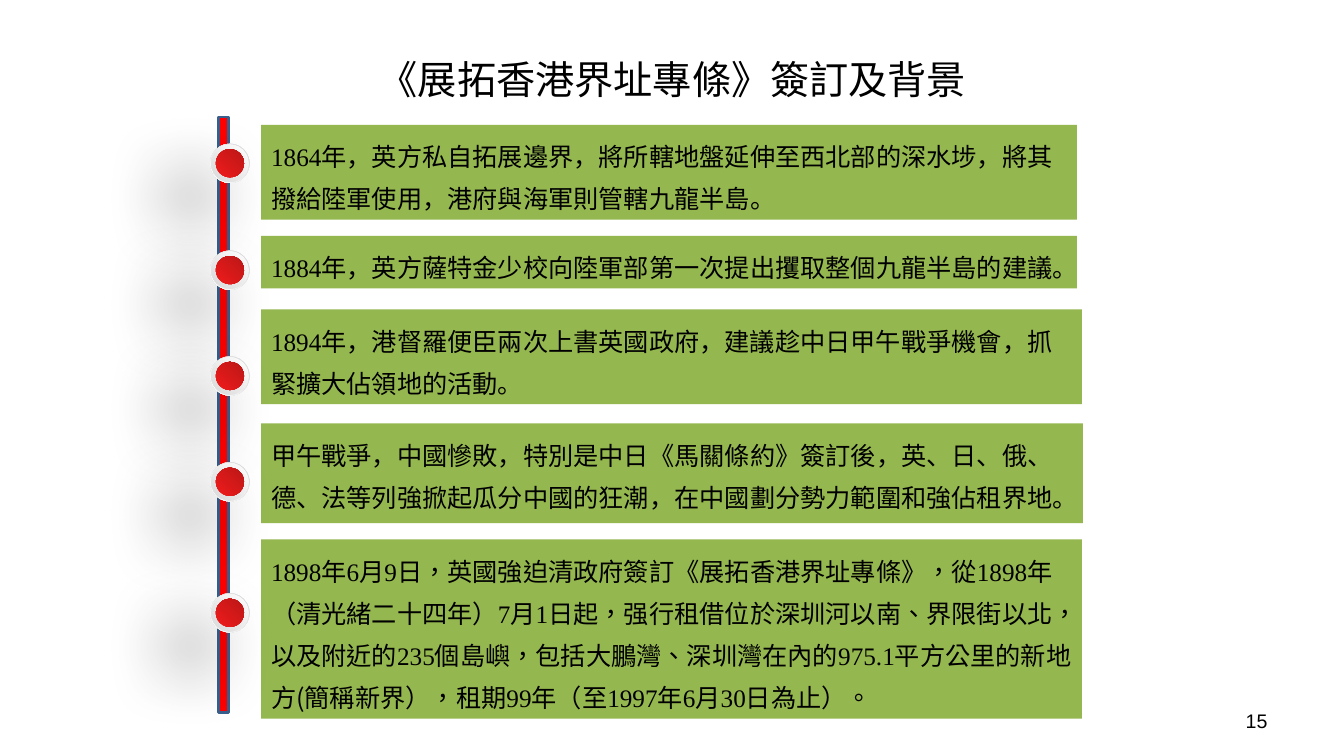
from lxml.etree import SubElement
from pptx import Presentation
from pptx.dml.color import RGBColor
from pptx.enum.lang import MSO_LANGUAGE_ID
from pptx.enum.shapes import MSO_SHAPE
from pptx.enum.text import MSO_ANCHOR, MSO_AUTO_SIZE, PP_ALIGN
from pptx.oxml.ns import qn
from pptx.util import Inches, Pt

BLACK = RGBColor(0x00, 0x00, 0x00)
WHITE = RGBColor(0xFF, 0xFF, 0xFF)
GREEN = RGBColor(0x95, 0xB7, 0x4F)
RED = RGBColor(0xFF, 0x00, 0x00)
BLUE = RGBColor(0x3A, 0x5F, 0x8C)
GREY = RGBColor(0xD9, 0xD9, 0xD9)
PALE = RGBColor(0xFE, 0xFE, 0xFE)
DARK_RED = RGBColor(0xBB, 0x17, 0x17)
BRIGHT_RED = RGBColor(0xF1, 0x1B, 0x1B)

CJK = "Noto Sans CJK SC"
SERIF = "Times New Roman"
SIMPLIFIED = MSO_LANGUAGE_ID.SIMPLIFIED_CHINESE
TRADITIONAL = MSO_LANGUAGE_ID.TRADITIONAL_CHINESE

BOTTOM_LEFT = {"l": "0", "t": "100000", "r": "100000", "b": "0"}
TOP_RIGHT = {"l": "100000", "t": "0", "r": "0", "b": "100000"}

# Text between bars alternates between the serif and the CJK font.
EVENTS = [
    (1.24, 8.09, 0.94, 1.62, SIMPLIFIED,
     "1864年|，英方私自拓展邊界，將所轄地盤延伸至西北部的深水埗，將其撥給陸軍使用，"
     "港府與海軍則管轄九龍半島。"),
    (2.34, 8.09, 0.52, 2.68, SIMPLIFIED,
     "1884|年，英方薩特金少校向陸軍部第一次提出攫取整個九龍半島的建議。"),
    (3.07, 8.14, 0.94, 3.73, SIMPLIFIED,
     "1894年|，港督羅便臣兩次上書英國政府，建議趁中日甲午戰爭機會，抓緊擴大佔領地的活動。"),
    (4.2, 8.15, 0.99, 4.78, SIMPLIFIED,
     "|甲午戰爭，中國慘敗，特別是中日《馬關條約》簽訂後，英、日、俄、德、法等列強"
     "掀起瓜分中國的狂潮，在中國劃分勢力範圍和強佔租界地。"),
    (5.35, 8.14, 1.78, 6.08, TRADITIONAL,
     "1898年6月9日|，英國強迫清政府簽訂《展拓香港界址專條》，從|1898|年（清光緒二十四年）|"
     "7月1日|起，强行租借位於深圳河以南、界限街以北，以及附近的|235|"
     "個島嶼，包括大鵬灣、深圳灣在內的|975.1|平方公里的新地方(簡稱新界），租期|99|"
     "年（至|1997年6月30日|為止）。"),
]


def write(sp, text, size=18, fonts=(SERIF, CJK), align=PP_ALIGN.LEFT,
          anchor=MSO_ANCHOR.TOP, spacing=None, lang=SIMPLIFIED):
    tf = sp.text_frame
    tf.word_wrap = True
    tf.vertical_anchor = anchor
    p = tf.paragraphs[0]
    p.alignment = align
    if spacing:
        p.line_spacing = Pt(spacing)
    for i, part in enumerate(text.split("|")):
        if not part:
            continue
        r = p.add_run()
        r.text = part
        r.font.size = Pt(size)
        r.font.name = fonts[i % len(fonts)]
        r.font.color.rgb = BLACK
        r.font.language_id = lang
        SubElement(r.font._element, qn("a:ea"), typeface=CJK)


def add_label(s, box, text, **fmt):
    write(s.shapes.add_textbox(*map(Inches, box)), text,
          anchor=MSO_ANCHOR.MIDDLE, **fmt)


def add_block(s, box, fill, line=None):
    sp = s.shapes.add_shape(MSO_SHAPE.RECTANGLE, *map(Inches, box))
    sp.shadow.inherit = False
    sp.fill.solid()
    sp.fill.fore_color.rgb = fill
    if line:
        sp.line.color.rgb = line
        sp.line.width = Pt(2)
    else:
        sp.line.fill.background()
    return sp


def add_disc(group, cx, cy, size, colors, focus):
    sp = group.shapes.add_shape(
        MSO_SHAPE.OVAL, Inches(cx - size / 2), Inches(cy - size / 2),
        Inches(size), Inches(size))
    sp.shadow.inherit = False
    sp.line.fill.background()
    sp.fill.gradient()
    for stop, color in zip(sp.fill.gradient_stops, colors):
        stop.color.rgb = color
    grad = sp._element.spPr.find(qn("a:gradFill"))
    grad.remove(grad.find(qn("a:lin")))
    radial = SubElement(grad, qn("a:path"), {"path": "circle"})
    SubElement(radial, qn("a:fillToRect"), focus)
    return sp


def add_shadow(sp):
    effects = sp._element.spPr.find(qn("a:effectLst"))
    shadow = SubElement(effects, qn("a:outerShdw"), blurRad=str(Pt(50)),
                        dist=str(Pt(37)), dir=str(140 * 60000),
                        algn="ctr", rotWithShape="0")
    color = SubElement(shadow, qn("a:srgbClr"), val=str(BLACK))
    SubElement(color, qn("a:alpha"), val="61000")


def add_marker(s, cx, cy):
    group = s.shapes.add_group_shape()
    add_shadow(add_disc(group, cx, cy, 0.39, (WHITE, GREY), BOTTOM_LEFT))
    add_disc(group, cx, cy, 0.37, (GREY, PALE), BOTTOM_LEFT)
    add_disc(group, cx, cy, 0.28, (DARK_RED, BRIGHT_RED), TOP_RIGHT)


def add_timeline(s, left, top, height):
    add_block(s, (left, top, 0.1, height), RED, BLUE)
    for y, width, box_height, marker_y, lang, text in EVENTS:
        sp = add_block(s, (left + 0.42, y, width, box_height), GREEN)
        write(sp, text, spacing=30, lang=lang)
        sp.text_frame.auto_size = MSO_AUTO_SIZE.NONE
        add_marker(s, left + 0.11, marker_y)


def main():
    prs = Presentation()
    prs.slide_width, prs.slide_height = Inches(13.33), Inches(7.5)
    s = prs.slides.add_slide(prs.slide_layouts[6])
    add_label(s, (2.17, 0.3, 9, 0.97), "《展拓香港界址專條》簽訂及背景",
              size=28, fonts=(CJK,), align=PP_ALIGN.CENTER)
    add_timeline(s, 2.17, 1.16, 5.91)
    add_label(s, (9.56, 6.95, 3.11, 0.4), "15",
              size=14, fonts=("Arial",), align=PP_ALIGN.RIGHT)
    prs.save("out.pptx")


if __name__ == "__main__":
    main()
